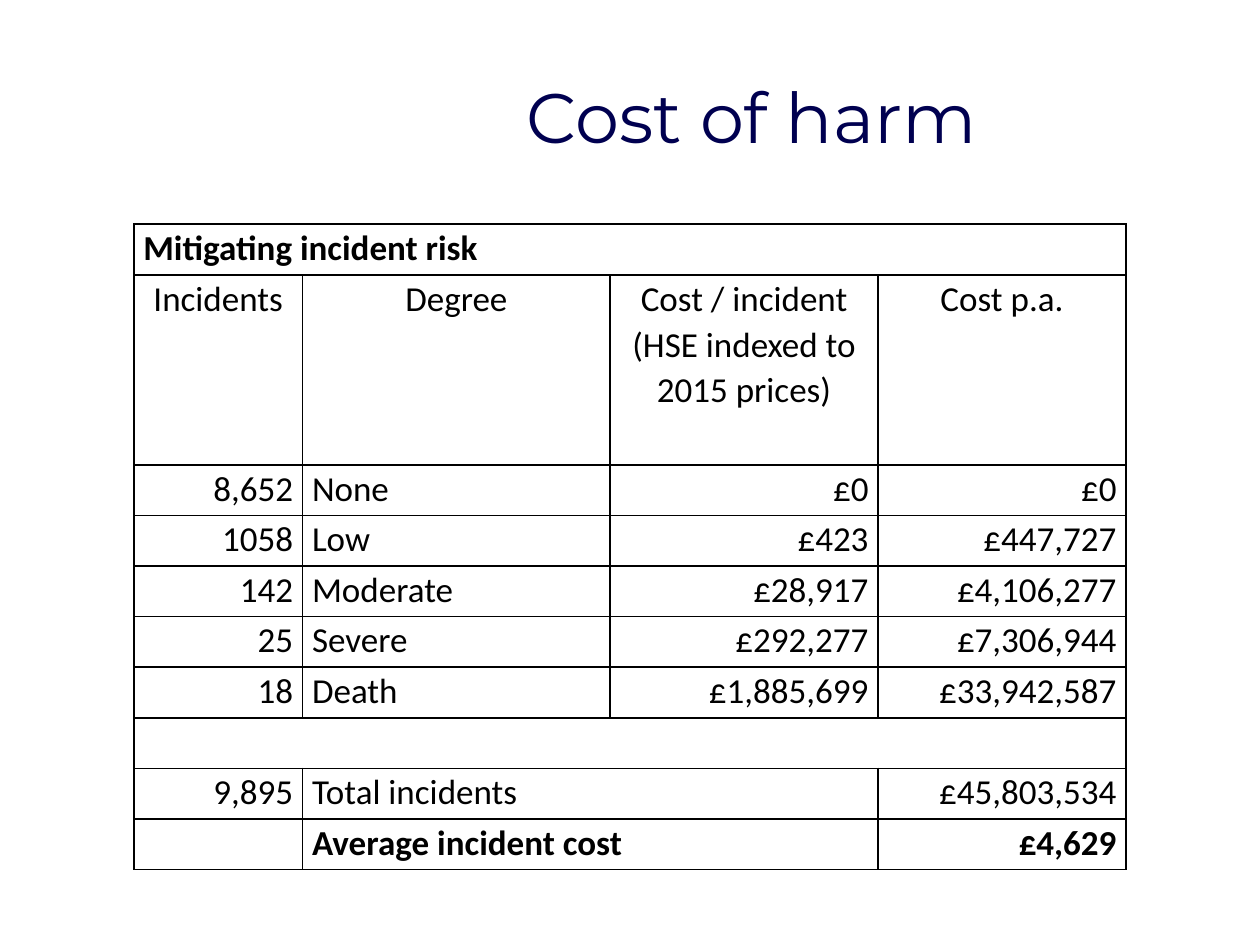
import pptx
import pptx.dml.color
import pptx.enum.text
import pptx.oxml
import pptx.oxml.ns
import pptx.util
from pptx.util import Cm

NAVY = pptx.dml.color.RGBColor(0x00, 0x00, 0x50)
BLACK = pptx.dml.color.RGBColor(0x00, 0x00, 0x00)
LEFT = pptx.enum.text.PP_ALIGN.LEFT
CENTER = pptx.enum.text.PP_ALIGN.CENTER
RIGHT = pptx.enum.text.PP_ALIGN.RIGHT


def write_text(frame, text, font="Calibri", size=20, color=BLACK, bold=False,
               align=LEFT, line_spacing=1.07):
    paragraph = frame.paragraphs[0]
    paragraph.alignment = align
    paragraph.line_spacing = line_spacing
    run = paragraph.add_run()
    run.text = text
    run.font.name = font
    run.font.size = pptx.util.Pt(size)
    run.font.bold = bold
    run.font.color.rgb = color


def add_borders(cell):
    """Draw a 1 pt line on all four sides; call before setting the fill."""
    properties = cell._tc.get_or_add_tcPr()
    for side in ("lnL", "lnR", "lnT", "lnB"):
        properties.append(pptx.oxml.parse_xml(
            f'<a:{side} {pptx.oxml.ns.nsdecls("a")} w="12700"><a:solidFill>'
            f'<a:srgbClr val="{BLACK}"/></a:solidFill></a:{side}>'))


presentation = pptx.Presentation()
presentation.slide_width = Cm(25.4)
presentation.slide_height = Cm(19.05)
slide = presentation.slides.add_slide(presentation.slide_layouts[6])

title = slide.shapes.add_textbox(Cm(4.9), Cm(0.74), Cm(20.5), Cm(3.18))
title.text_frame.word_wrap = True
title.text_frame.vertical_anchor = pptx.enum.text.MSO_ANCHOR.MIDDLE
write_text(title.text_frame, "Cost of harm", font="Montserrat", size=40,
           color=NAVY, align=CENTER, line_spacing=1.0)

ROWS = [
    ("Mitigating incident risk", "", "", ""),
    ("Incidents", "Degree", "Cost / incident (HSE indexed to 2015 prices)", "Cost p.a."),
    ("8,652", "None", "£0", "£0"),
    ("1058", "Low", "£423", "£447,727"),
    ("142", "Moderate", "£28,917", "£4,106,277"),
    ("25", "Severe", "£292,277", "£7,306,944"),
    ("18", "Death", "£1,885,699", "£33,942,587"),
    ("", "", "", ""),
    ("9,895", "Total incidents", "", "£45,803,534"),
    ("", "Average incident cost", "", "£4,629"),
]
COLUMN_WIDTHS = (3.4, 6.2, 5.4, 5.0)
COLUMN_ALIGNS = (RIGHT, LEFT, RIGHT, RIGHT)
TITLE_ROW, HEADING_ROW, AVERAGE_ROW = 0, 1, len(ROWS) - 1
MERGES = [(0, 0, 3), (7, 0, 3), (8, 1, 2), (9, 1, 2)]  # row, first column, last column

table = slide.shapes.add_table(len(ROWS), len(COLUMN_WIDTHS), Cm(2.7), Cm(4.52),
                               Cm(20), Cm(13)).table
table.first_row = False
table.horz_banding = False
for column, width in zip(table.columns, COLUMN_WIDTHS):
    column.width = Cm(width)

for row_index, texts in enumerate(ROWS):
    table.rows[row_index].height = Cm(3.83 if row_index == HEADING_ROW else 1.02)
    for column_index, text in enumerate(texts):
        cell = table.cell(row_index, column_index)
        cell.margin_left = cell.margin_right = Cm(0.19)
        cell.margin_top = cell.margin_bottom = 0
        add_borders(cell)
        cell.fill.background()
        if not text:
            continue
        if row_index == TITLE_ROW:
            align = LEFT
        elif row_index == HEADING_ROW:
            align = CENTER
        else:
            align = COLUMN_ALIGNS[column_index]
        write_text(cell.text_frame, text, align=align,
                   bold=row_index in (TITLE_ROW, AVERAGE_ROW))

for row_index, first, last in MERGES:
    table.cell(row_index, first).merge(table.cell(row_index, last))

presentation.save("out.pptx")
